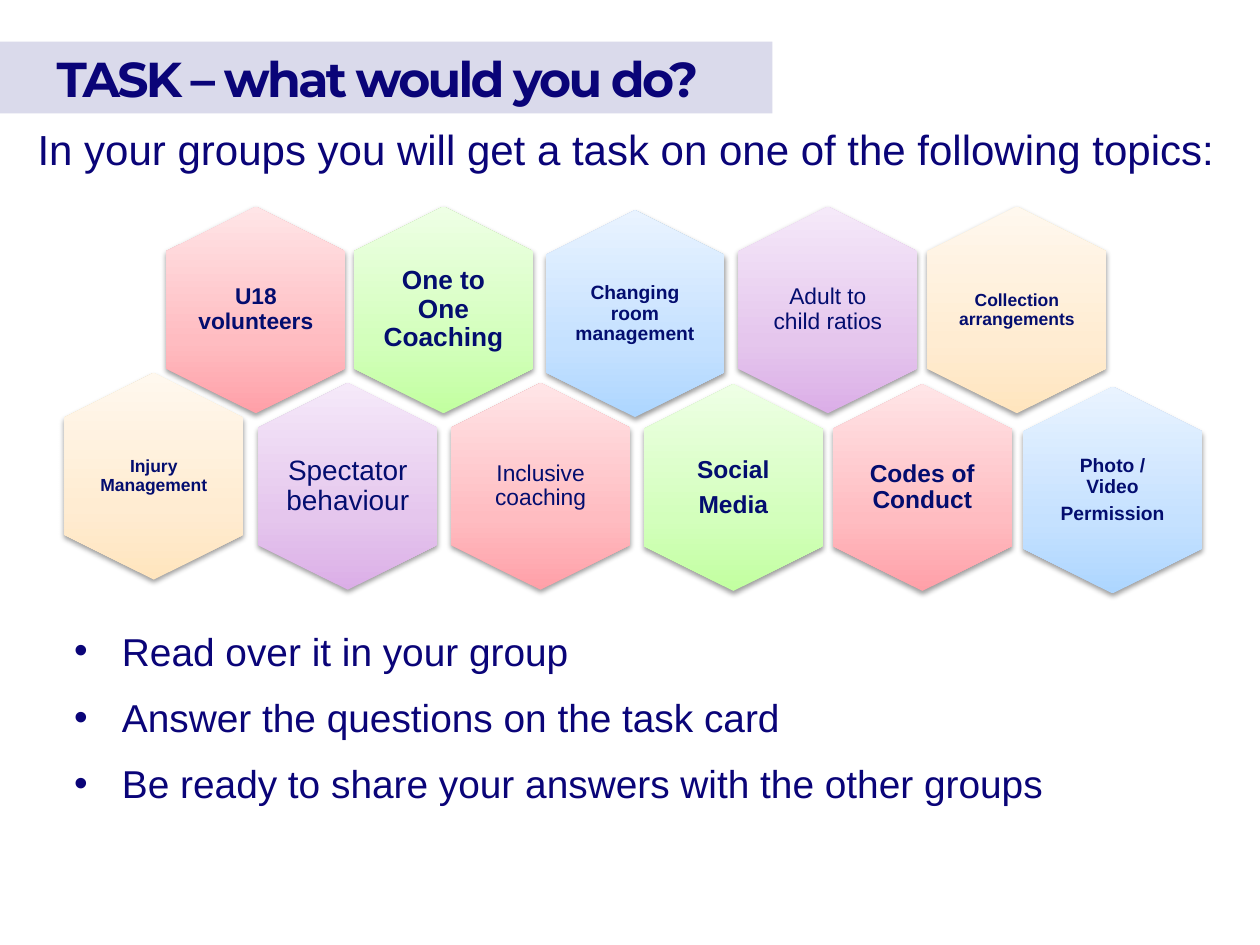
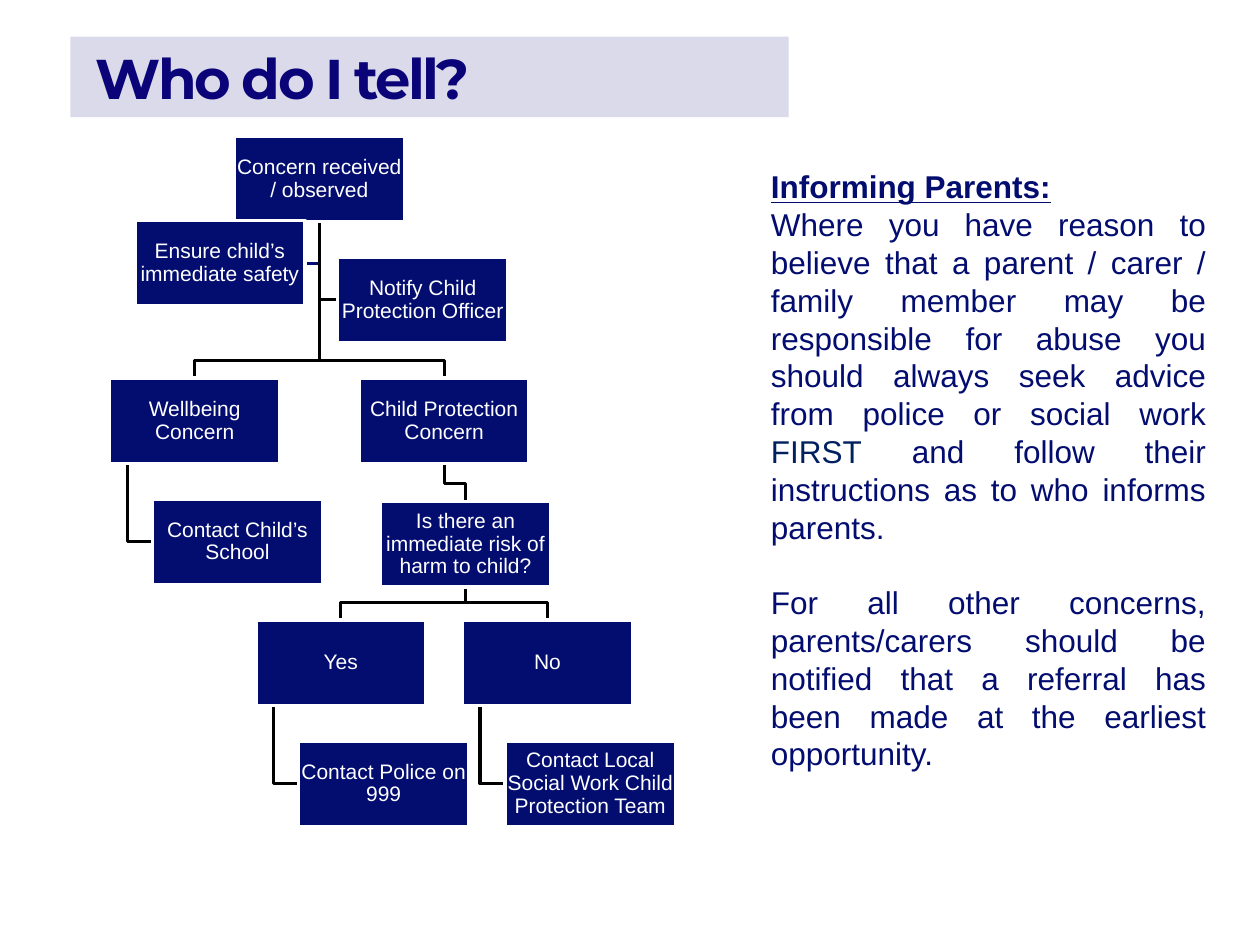
from dataclasses import dataclass

from lxml import etree
from pptx import Presentation
from pptx import util as u
from pptx.dml.color import RGBColor
from pptx.enum import shapes, text
from pptx.oxml import parse_xml
from pptx.oxml.ns import nsdecls, qn

Inches, Pt = u.Inches, u.Pt


@dataclass(frozen=True)
class Theme:
    heading_font: str = "Montserrat"
    body_font: str = "Arial"
    band: str = "DADAEB"
    heading: str = "0A0478"
    navy: str = "030D6F"
    accent: str = "002060"
    white: str = "FFFFFF"
    black: str = "000000"
    intro_size: float = 24
    bullet_size: float = 22.2
    note_size: float = 18
    node_size: float = 12
    # Hexagon gradients, from the bottom up
    red: tuple = ("FFA0A8", "FFBCC1", "FFE5E7")
    green: tuple = ("C2FFA0", "D3FFBC", "EEFFE5")
    blue: tuple = ("ADD6FF", "C5E1FF", "E9F3FF")
    purple: tuple = ("DBAEE7", "E5C6ED", "F5E9F9")
    orange: tuple = ("FFE5BE", "FFECD2", "FFF8EE")


THEME = Theme()


@dataclass(frozen=True)
class Box:
    left: float
    top: float
    width: float
    height: float

    @property
    def lengths(self) -> tuple:
        return tuple(Inches(v) for v in (self.left, self.top, self.width, self.height))

    @property
    def center_x(self) -> float:
        return self.left + self.width / 2

    @property
    def center_y(self) -> float:
        return self.top + self.height / 2

    @property
    def right(self) -> float:
        return self.left + self.width

    @property
    def bottom(self) -> float:
        return self.top + self.height


@dataclass(frozen=True)
class Topic:
    label: str
    x: float
    y: float
    colors: tuple
    size: float
    bold: bool = True
    inset: float = 0


# ---- Shared helpers ----
def style(font, size: float, color: str, bold: bool = False,
          name: str = THEME.body_font) -> None:
    font.name, font.size, font.bold = name, Pt(size), bold
    font.color.rgb = RGBColor.from_string(color)


def set_insets(frame, side: float, end: float) -> None:
    frame.margin_left = frame.margin_right = Inches(side)
    frame.margin_top = frame.margin_bottom = Inches(end)
    frame.word_wrap = True


def add_rect(page, box: Box, fill: str):
    rect = page.shapes.add_shape(shapes.MSO_SHAPE.RECTANGLE, *box.lengths)
    rect.shadow.inherit = False
    rect.fill.solid()
    rect.fill.fore_color.rgb = RGBColor.from_string(fill)
    rect.line.fill.background()
    return rect


def add_text(page, box: Box, words: str, size: float, color: str):
    frame = page.shapes.add_textbox(*box.lengths).text_frame
    set_insets(frame, 0.1, 0.05)
    frame.text = words
    for para in frame.paragraphs:
        for span in para.runs:
            style(span.font, size, color)
    return frame


def center_label(frame, words: str, size: float, color: str, bold: bool,
                 inset: float) -> None:
    set_insets(frame, inset, inset)
    frame.vertical_anchor = text.MSO_ANCHOR.MIDDLE
    frame.text = words
    for index, para in enumerate(frame.paragraphs):
        para.alignment = text.PP_ALIGN.CENTER
        para.line_spacing = 0.9
        if index:
            para.space_before = Pt(round(0.35 * size, 1))
        for span in para.runs:
            style(span.font, size, color, bold)


def add_title(page, box: Box, words: str, size: float, indent: float = 0.2) -> None:
    frame = add_rect(page, box, THEME.band).text_frame
    set_insets(frame, 0.2, 0.05)
    frame.margin_left = Inches(indent)
    frame.margin_right = 0
    frame.vertical_anchor = text.MSO_ANCHOR.MIDDLE
    frame.text = words
    para = frame.paragraphs[0]
    para.alignment = text.PP_ALIGN.LEFT
    span = para.runs[0]
    style(span.font, size, THEME.heading, True, THEME.heading_font)
    span.font._element.set("spc", "-150")


# ---- Task slide: topic hexagons ----
TOPICS = [
    Topic("U18 volunteers", 2.03, 2.46, THEME.red, 13),
    Topic("One to One Coaching", 3.52, 2.46, THEME.green, 15),
    Topic("Changing room management", 5.04, 2.49, THEME.blue, 11),
    Topic("Adult to child ratios", 6.57, 2.46, THEME.purple, 13, False),
    Topic("Collection arrangements", 8.07, 2.46, THEME.orange, 10),
    Topic("Injury Management", 1.22, 3.78, THEME.orange, 10),
    Topic("Spectator behaviour", 2.76, 3.86, THEME.purple, 16, False),
    Topic("Inclusive coaching", 4.29, 3.86, THEME.red, 13, False),
    Topic("Social\nMedia", 5.82, 3.87, THEME.green, 14),
    Topic("Codes of Conduct", 7.32, 3.87, THEME.red, 14),
    Topic("Photo / Video\nPermission", 8.83, 3.89, THEME.blue, 11, True, 0.05),
]
TASKS = ["Read over it in your group", "Answer the questions on the task card",
         "Be ready to share your answers with the other groups"]


def centered(x: float, y: float, width: float, height: float) -> Box:
    return Box(x - width / 2, y - height / 2, width, height)


def add_topic(page, topic: Topic) -> None:
    hexagon = page.shapes.add_shape(
        shapes.MSO_SHAPE.HEXAGON, *centered(topic.x, topic.y, 1.64, 1.42).lengths)
    hexagon.rotation = 90
    hexagon.adjustments[0] = 0.25
    hexagon.line.fill.background()
    # Three-stop gradient that stays upright, and a soft shadow below
    stops = "".join(f'<a:gs pos="{position}"><a:srgbClr val="{color}"/></a:gs>'
                    for position, color in zip((0, 35000, 100000), topic.colors))
    gradient = parse_xml(
        f'<a:gradFill {nsdecls("a")} rotWithShape="0"><a:gsLst>{stops}</a:gsLst>'
        '<a:lin ang="16200000" scaled="1"/></a:gradFill>')
    shadow = parse_xml(
        f'<a:effectLst {nsdecls("a")}><a:outerShdw blurRad="40000" dist="20000" '
        f'dir="5400000" rotWithShape="0"><a:srgbClr val="{THEME.black}">'
        '<a:alpha val="38000"/></a:srgbClr></a:outerShdw></a:effectLst>')
    properties = hexagon._element.spPr
    properties.find(qn("a:prstGeom")).addnext(gradient)
    properties.append(shadow)

    label = page.shapes.add_textbox(*centered(topic.x, topic.y, 0.98, 1.13).lengths)
    center_label(label.text_frame, topic.label, topic.size, THEME.navy,
                 topic.bold, topic.inset)


def build_task_slide(page) -> None:
    add_text(page, Box(0.2, 0.93, 9.58, 0.7),
             "In your groups you will get a task on one of the following topics:",
             THEME.intro_size, THEME.heading)
    add_title(page, Box(0, 0.33, 6.13, 0.57), "TASK – what would you do?", 28, 0.45)
    for topic in TOPICS:
        add_topic(page, topic)
    frame = add_text(page, Box(0.49, 4.93, 9.5, 1.5), "\n".join(TASKS),
                     THEME.bullet_size, THEME.heading)
    for index, para in enumerate(frame.paragraphs):
        properties = para._p.get_or_add_pPr()
        properties.set("marL", str(Inches(0.38)))
        properties.set("indent", str(-Inches(0.38)))
        etree.SubElement(properties, qn("a:buFont")).set("typeface", THEME.body_font)
        etree.SubElement(properties, qn("a:buChar")).set("char", "•")
        para.space_after = Pt(2.2)
        if index:
            para.space_before = Pt(8.9)


# ---- Referral slide: decision chart ----
def node(left: float, top: float) -> Box:
    return Box(left, top, 1.35, 0.68)


CONCERN, WELLBEING, SCHOOL = node(1.86, 1.08), node(0.87, 3), node(1.21, 3.96)
PROTECTION, RISK = node(2.85, 3), node(3.02, 3.98)
YES, POLICE = node(2.03, 4.92), node(2.37, 5.88)
NO, SOCIAL_WORK = node(3.67, 4.92), node(4.01, 5.88)
SAFETY, OFFICER = node(1.07, 1.75), node(2.68, 2.04)

NODE_LABELS = [
    (CONCERN, "Concern received / observed"),
    (WELLBEING, "Wellbeing Concern"),
    (SCHOOL, "Contact Child’s School"),
    (PROTECTION, "Child Protection Concern"),
    (RISK, "Is there an immediate risk of harm to child?"),
    (YES, "Yes"),
    (POLICE, "Contact Police on 999"),
    (NO, "No"),
    (SOCIAL_WORK, "Contact Local Social Work Child Protection Team"),
    (SAFETY, "Ensure child’s immediate safety"),
    (OFFICER, "Notify Child Protection Officer"),
]


def add_route(page, points: list, color: str, weight: float) -> None:
    start, *rest = [(Inches(x), Inches(y)) for x, y in points]
    builder = page.shapes.build_freeform(*start)
    builder.add_line_segments(rest, close=False)
    route = builder.convert_to_shape()
    route.shadow.inherit = False
    route.fill.background()
    route.line.color.rgb = RGBColor.from_string(color)
    route.line.width = Pt(weight)


def link_side(page, x: float, parent: Box, child: Box, color: str = THEME.black,
              weight: float = 1.75) -> None:
    """Go down from the parent, then across to the child's nearer side."""
    edge = child.left if child.left > x else child.right
    add_route(page, [(x, parent.bottom), (x, child.center_y), (edge, child.center_y)],
              color, weight)


def link_down(page, parent: Box, child: Box) -> None:
    """Go down from the parent, turning just above the child."""
    turn = child.top - 0.14
    add_route(page, [(parent.center_x, parent.bottom), (parent.center_x, turn),
                     (child.center_x, turn), (child.center_x, child.top)],
              THEME.black, 1.75)


def add_parent_notes(page) -> None:
    notes = [
        "Informing Parents:",
        "Where you have reason to believe that a parent / carer / family member may be "
        "responsible for abuse you should always seek advice from police or social work ",
        "For all other concerns, parents/carers should be notified that a referral has "
        "been made at the earliest opportunity.",
    ]
    frame = add_text(page, Box(6.02, 1.28, 3.65, 4.95), "\n".join(notes),
                     THEME.note_size, THEME.navy)
    heading, advice, others = frame.paragraphs
    heading.runs[0].font.bold = heading.runs[0].font.underline = True
    for words, color in (("FIRST", THEME.accent),
                         (" and follow their instructions as to who informs parents.",
                          THEME.navy)):
        span = advice.add_run()
        span.text = words
        style(span.font, THEME.note_size, color)
    advice.alignment = others.alignment = text.PP_ALIGN.JUSTIFY
    others.space_before = Pt(21.6)


def build_referral_slide(page) -> None:
    add_title(page, Box(0.56, 0.29, 5.7, 0.64), "Who do I tell?", 32)
    link_side(page, CONCERN.center_x, CONCERN, OFFICER)
    link_side(page, CONCERN.center_x, CONCERN, SAFETY, THEME.navy, 2)
    for parent, child in ((NO, SOCIAL_WORK), (YES, POLICE), (WELLBEING, SCHOOL)):
        link_side(page, parent.left + 0.14, parent, child)
    for parent, child in ((RISK, NO), (RISK, YES), (PROTECTION, RISK),
                          (CONCERN, PROTECTION), (CONCERN, WELLBEING)):
        link_down(page, parent, child)
    for box, label in NODE_LABELS:
        rect = add_rect(page, box, THEME.navy)
        rect.line.color.rgb = RGBColor.from_string(THEME.white)
        rect.line.width = Pt(2)
        center_label(rect.text_frame, label, THEME.node_size, THEME.white, False, 0.01)
    add_parent_notes(page)


def main() -> None:
    deck = Presentation()
    deck.slide_width, deck.slide_height = Inches(10), Inches(7.5)
    for build in (build_task_slide, build_referral_slide):
        build(deck.slides.add_slide(deck.slide_layouts[6]))
    deck.save("out.pptx")


if __name__ == "__main__":
    main()
